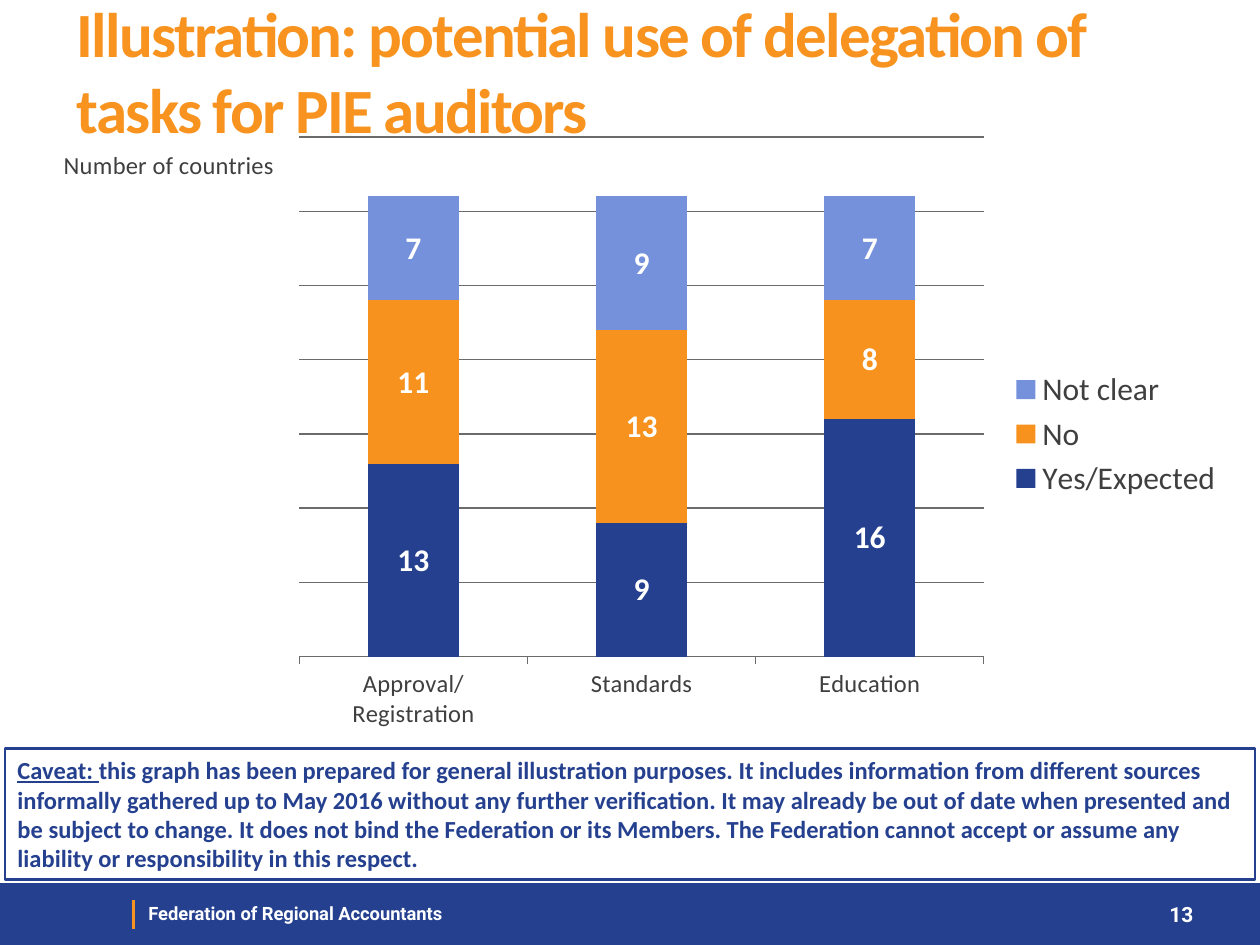
from lxml.etree import SubElement
from pptx import Presentation
from pptx.chart.data import CategoryChartData
from pptx.dml.color import RGBColor
from pptx.enum.chart import XL_CHART_TYPE, XL_LEGEND_POSITION, XL_TICK_MARK
from pptx.enum.shapes import MSO_CONNECTOR, MSO_SHAPE
from pptx.enum.text import MSO_ANCHOR, MSO_AUTO_SIZE, PP_ALIGN
from pptx.oxml import parse_xml
from pptx.oxml.ns import nsdecls, qn
from pptx.util import Inches, Pt

NAVY = "24408F"
ORANGE = "F7931E"
WHITE = "FFFFFF"
DARK_GREY = "3F3F3F"
GRID_GREY = "6B6B6B"
CATEGORIES = ["Approval/Registration", "Standards", "Education"]
ANSWERS = [
    ("Yes/Expected", (13, 9, 16), NAVY),
    ("No", (11, 13, 8), "F7921E"),
    ("Not clear", (7, 9, 7), "7691DC"),
]
CAVEAT = (
    "this graph has been prepared for general illustration purposes. It includes "
    "information from different sources informally gathered up to May 2016 without "
    "any further verification. It may already be out of date when presented and be "
    "subject to change. It does not bind the Federation or its Members. The "
    "Federation cannot accept or assume any liability or responsibility in this respect."
)


def rgb(color):
    return RGBColor.from_string(color)


def set_font(font, size, color, name="Calibri", bold=True):
    font.name = name
    font.size = Pt(size)
    font.bold = bold
    font.color.rgb = rgb(color)


def set_line(line, color, width):
    line.color.rgb = rgb(color)
    line.width = Pt(width)


def add_panel(slide, box, fill, border=None):
    panel = slide.shapes.add_shape(MSO_SHAPE.RECTANGLE, *map(Inches, box))
    panel.shadow.inherit = False
    panel.fill.solid()
    panel.fill.fore_color.rgb = rgb(fill)
    if border:
        set_line(panel.line, border, 1.5)
    else:
        panel.line.fill.background()
    return panel


def add_label(slide, box, text, size, align=PP_ALIGN.LEFT):
    frame = slide.shapes.add_textbox(*map(Inches, box)).text_frame
    frame.word_wrap = True
    frame.vertical_anchor = MSO_ANCHOR.MIDDLE
    paragraph = frame.paragraphs[0]
    paragraph.text = text
    paragraph.alignment = align
    set_font(paragraph.font, size, WHITE, "Roboto")


def add_footer(slide):
    add_panel(slide, (0, 7.01, 10, 0.49), NAVY)
    add_label(slide, (1.08, 7.1, 3.7, 0.29), "Federation of Regional Accountants", 10.5)
    add_label(slide, (8.94, 7.01, 0.63, 0.49), "13", 12, PP_ALIGN.RIGHT)
    divider = slide.shapes.add_connector(
        MSO_CONNECTOR.STRAIGHT, Inches(1.06), Inches(7.14), Inches(1.06), Inches(7.37)
    )
    set_line(divider.line, ORANGE, 1.5)
    SubElement(divider._element.spPr, qn("a:effectLst"))


def set_title(slide):
    title = slide.shapes.title
    title.left, title.top, title.width, title.height = map(Inches, (0.51, 0.02, 9, 1.08))
    frame = title.text_frame
    frame.auto_size = MSO_AUTO_SIZE.NONE
    frame.vertical_anchor = MSO_ANCHOR.MIDDLE
    paragraph = frame.paragraphs[0]
    paragraph.alignment = PP_ALIGN.LEFT
    heading = paragraph.add_run()
    heading.text = "Illustration: potential use of delegation of tasks for PIE auditors"
    set_font(heading.font, 36, ORANGE)
    heading.font._element.set("spc", "-100")


def layout_xml(target, **fractions):
    modes = "".join(f'<c:{side}Mode val="edge"/>' for side in "xy")
    places = "".join(f'<c:{key} val="{value}"/>' for key, value in fractions.items())
    return parse_xml(
        f'<c:layout {nsdecls("c")}><c:manualLayout>{target}{modes}{places}'
        "</c:manualLayout></c:layout>"
    )


def replace_layout(parent, layout, position):
    for old in parent.findall(qn("c:layout")):
        parent.remove(old)
    parent.insert(position, layout)


def format_axes(chart):
    countries = chart.value_axis
    countries.minimum_scale = 0
    countries.maximum_scale = 35
    countries.major_unit = 5
    countries.has_major_gridlines = True
    set_line(countries.major_gridlines.format.line, GRID_GREY, 0.75)
    countries.visible = False
    caption = countries.axis_title
    caption.text_frame.text = "Number of countries"
    set_font(caption.text_frame.paragraphs[0].font, 14, DARK_GREY, bold=False)
    body = caption.text_frame._txBody.find(qn("a:bodyPr"))
    body.set("rot", "0")
    body.set("vert", "horz")
    replace_layout(caption._element, layout_xml("", x=0.02, y=0.03), 1)

    topics = chart.category_axis
    topics.major_tick_mark = XL_TICK_MARK.OUTSIDE
    set_line(topics.format.line, GRID_GREY, 0.75)
    set_font(topics.tick_labels.font, 14, DARK_GREY, bold=False)


def add_answers_chart(slide):
    answers = CategoryChartData()
    answers.categories = CATEGORIES
    for name, counts, _ in ANSWERS:
        answers.add_series(name, counts)
    chart = slide.shapes.add_chart(
        XL_CHART_TYPE.COLUMN_STACKED, *map(Inches, (0.28, 0.99, 9.53, 4.91)), answers
    ).chart
    chart.has_title = False
    set_font(chart.font, 18, DARK_GREY, bold=False)
    chart.has_legend = True
    chart.legend.position = XL_LEGEND_POSITION.RIGHT
    chart.legend.include_in_layout = False
    format_axes(chart)

    plot = chart.plots[0]
    plot.gap_width = 150
    plot.overlap = 100
    plot.vary_by_categories = False
    for series, (_, _, color) in zip(plot.series, ANSWERS):
        series.format.fill.solid()
        series.format.fill.fore_color.rgb = rgb(color)
        series.data_labels.show_value = True
        set_font(series.data_labels.font, 18, WHITE)
    inner = layout_xml('<c:layoutTarget val="inner"/>', x=0.22, y=0.02, w=0.57, h=0.84)
    replace_layout(chart._chartSpace.chart.plotArea, inner, 0)


def add_caveat(slide):
    frame = add_panel(slide, (0.04, 5.94, 9.92, 1.04), WHITE, NAVY).text_frame
    frame.word_wrap = True
    frame.vertical_anchor = MSO_ANCHOR.MIDDLE
    paragraph = frame.paragraphs[0]
    paragraph.alignment = PP_ALIGN.LEFT
    for text, underline in (("Caveat: ", True), (CAVEAT, False)):
        run = paragraph.add_run()
        run.text = text
        set_font(run.font, 14, NAVY)
        run.font.underline = underline


def main():
    presentation = Presentation()
    presentation.slide_width = Inches(10)
    presentation.slide_height = Inches(7.5)
    slide = presentation.slides.add_slide(presentation.slide_layouts[5])
    add_footer(slide)
    set_title(slide)
    add_answers_chart(slide)
    add_caveat(slide)
    presentation.save("out.pptx")


if __name__ == "__main__":
    main()
